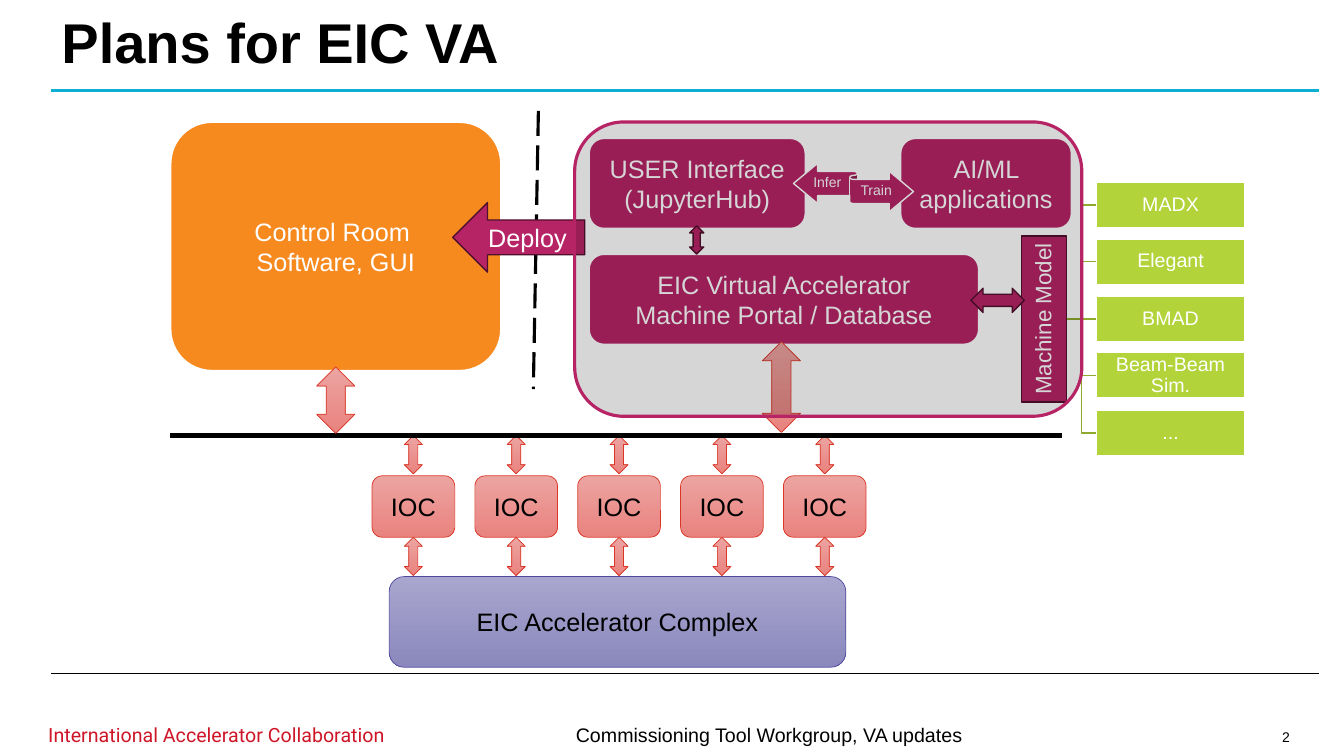
from dataclasses import dataclass

from lxml import etree
from pptx import Presentation
from pptx.dml.color import RGBColor
from pptx.enum.dml import MSO_LINE
from pptx.enum.shapes import MSO_CONNECTOR, MSO_SHAPE
from pptx.enum.text import MSO_ANCHOR, PP_ALIGN
from pptx.oxml.ns import qn
from pptx.util import Pt

PX = 9144
RECT, ROUND = MSO_SHAPE.RECTANGLE, MSO_SHAPE.ROUNDED_RECTANGLE
UP_DOWN, LEFT_RIGHT = MSO_SHAPE.UP_DOWN_ARROW, MSO_SHAPE.LEFT_RIGHT_ARROW
LEFT_ARROW, RIBBON = MSO_SHAPE.LEFT_ARROW, MSO_SHAPE.LEFT_RIGHT_RIBBON
STRAIGHT, ELBOW = MSO_CONNECTOR.STRAIGHT, MSO_CONNECTOR.ELBOW
LONG_DASH = MSO_LINE.LONG_DASH
MIDDLE, TOP = MSO_ANCHOR.MIDDLE, MSO_ANCHOR.TOP
CENTER, LEFT = PP_ALIGN.CENTER, PP_ALIGN.LEFT


@dataclass(frozen=True)
class Theme:
    black: str = "000000"
    white: str = "FFFFFF"
    cyan: str = "0DB0D4"
    crimson: str = "CE1628"
    orange: str = "F68A1F"
    magenta: str = "B62466"
    plum: str = "50102D"
    green: str = "B2D33A"
    olive: str = "8FA92E"
    red: str = "DA3525"
    violet: str = "50489D"
    rose_fade: tuple = ("ECA4A1", "E9837F")
    violet_fade: tuple = ("A8A6CE", "8B88BD")
    font: str = "Arial"
    footer_font: str = "Roboto"
    title: int = 40
    body: int = 18
    model: int = 16
    small: int = 14
    tiny: int = 10


T = Theme()


def rgb(value):
    return RGBColor.from_string(value)


def set_attrs(obj, values):
    for name, value in values.items():
        setattr(obj, name, value)


def write(sp, text, size, color, font=T.font, bold=False, align=CENTER,
          anchor=MIDDLE, spacing=1.0, inset=None):
    tf = sp.text_frame
    tf.text = text
    set_attrs(tf, {"word_wrap": True, "vertical_anchor": anchor})
    if inset:
        x, y = inset
        set_attrs(tf, {"margin_left": x * PX, "margin_right": x * PX,
                       "margin_top": y * PX, "margin_bottom": y * PX})
    for p in tf.paragraphs:
        set_attrs(p, {"alignment": align, "line_spacing": spacing})
        for r in p.runs:
            set_attrs(r.font, {"name": font, "size": Pt(size), "bold": bold})
            r.font.color.rgb = rgb(color)


def paint(fill, color):
    if isinstance(color, tuple):
        fill.gradient()
        fill.gradient_angle = 270
        for stop, shade in zip(fill.gradient_stops, color):
            stop.color.rgb = rgb(shade)
    else:
        fill.solid()
        fill.fore_color.rgb = rgb(color)


def add_block(slide, kind, box, fill, line, width):
    sp = slide.shapes.add_shape(kind, *(v * PX for v in box))
    sp.shadow.inherit = False
    paint(sp.fill, fill)
    sp.line.color.rgb = rgb(line)
    sp.line.width = Pt(width)
    return sp


def add_magenta_box(slide, box, text):
    sp = add_block(slide, ROUND, box, T.magenta, T.white, 1.5)
    write(sp, text, T.body, T.white)


def add_rose_arrow(slide, box):
    add_block(slide, UP_DOWN, box, T.rose_fade, T.red, 0.5)


def add_label(slide, box, text, size, color, **fmt):
    sp = slide.shapes.add_textbox(*(v * PX for v in box))
    write(sp, text, size, color, **fmt)


def add_line(slide, ends, color, width, kind=STRAIGHT, dash=None):
    cxn = slide.shapes.add_connector(kind, *(v * PX for v in ends))
    cxn.line.color.rgb = rgb(color)
    set_attrs(cxn.line, {"width": Pt(width), "dash_style": dash})
    etree.SubElement(cxn._element.spPr, qn("a:effectLst"))
    return cxn


def add_frame(slide):
    sp = slide.shapes.title
    set_attrs(sp, {"left": 51 * PX, "top": 0, "width": 1258 * PX, "height": 90 * PX})
    write(sp, "Plans for EIC VA", T.title, T.black, bold=True, align=LEFT, spacing=0.9)
    add_line(slide, (51, 90, 1308, 90), T.cyan, 2)
    add_line(slide, (51, 668, 1308, 668), T.black, 0.5)
    add_label(slide, (38, 715, 532, 32), "International Accelerator Collaboration",
              T.small, T.crimson, font=T.footer_font, align=LEFT, anchor=TOP, spacing=0.9)
    add_label(slide, (525, 715, 476, 32), "Commissioning Tool Workgroup, VA updates",
              T.small, T.black, anchor=TOP, spacing=0.9)
    add_label(slide, (1252, 715, 47, 32), "2", T.tiny, T.black, inset=(0, 0))


def add_accelerator(slide):
    sp = add_block(slide, ROUND, (386, 572, 453, 90), T.violet_fade, T.violet, 0.5)
    write(sp, "EIC Accelerator Complex", T.body, T.black)
    for i in range(5):
        x = 369 + 102 * i
        sp = add_block(slide, ROUND, (x, 472, 82, 61), T.rose_fade, T.red, 0.5)
        write(sp, "IOC", T.body, T.black)
        for y in (432, 533):
            add_rose_arrow(slide, (x + 32, y, 18, 38))
    add_line(slide, (169, 432, 1053, 432), T.black, 3)


def add_machine_model(slide):
    model = add_block(slide, RECT, (1013, 234, 45, 165), T.magenta, T.plum, 1)
    write(model, "Machine Model", T.model, T.white, spacing=0.9, inset=(1, 1))
    model.text_frame._txBody.bodyPr.set("vert", "vert270")
    codes = ("MADX", "Elegant", "BMAD", "Beam-Beam Sim.", "...")
    for i, code in enumerate(codes):
        y = round(181 + 56.4 * i)
        sp = add_block(slide, RECT, (1087, y, 148, 45), T.green, T.white, 1)
        write(sp, code, T.small, T.white, spacing=0.9, inset=(1, 1))
        kind = STRAIGHT if i == len(codes) // 2 else ELBOW
        cxn = add_line(slide, (1058, 316, 1087, y + 22), T.olive, 1, kind)
        cxn.begin_connect(model, 3)
        cxn.end_connect(sp, 1)
    add_block(slide, LEFT_RIGHT, (963, 286, 53, 24), T.magenta, T.plum, 1)


def add_control_room(slide):
    sp = add_block(slide, ROUND, (169, 121, 328, 247), T.orange, T.white, 1.5)
    write(sp, "Control Room \nSoftware, GUI", T.body, T.white)
    add_rose_arrow(slide, (314, 364, 38, 66))
    add_line(slide, (534, 110, 529, 386), T.black, 2.25, dash=LONG_DASH)
    sp = add_block(slide, LEFT_ARROW, (449, 201, 131, 69), T.magenta, T.plum, 1)
    write(sp, "Deploy", T.body, T.white)


def add_applications(slide):
    add_magenta_box(slide, (584, 137, 215, 90), "USER Interface\n(JupyterHub)")
    add_magenta_box(slide, (893, 137, 170, 90), "AI/ML applications")
    add_block(slide, UP_DOWN, (684, 224, 14, 28), T.magenta, T.plum, 1)
    add_block(slide, RIBBON, (787, 162, 119, 48), T.magenta, T.white, 1)
    for box, text in (((801, 170, 39, 23), "Infer"), ((846, 178, 46, 23), "Train")):
        add_label(slide, box, text, T.tiny, T.white, spacing=0.9, inset=(0, 4))


def add_shade(slide):
    sp = add_block(slide, ROUND, (570, 121, 503, 292), T.black, T.magenta, 2.25)
    clr = sp._element.spPr.find(qn("a:solidFill")).find(qn("a:srgbClr"))
    etree.SubElement(clr, qn("a:alpha"), val="16000")


def main():
    prs = Presentation()
    set_attrs(prs, {"slide_width": 1333 * PX, "slide_height": 750 * PX})
    slide = prs.slides.add_slide(prs.slide_layouts[5])
    add_frame(slide)
    add_accelerator(slide)
    add_magenta_box(slide, (584, 252, 387, 90),
                    "EIC Virtual Accelerator\nMachine Portal / Database")
    add_rose_arrow(slide, (756, 339, 38, 90))
    add_machine_model(slide)
    add_applications(slide)
    add_control_room(slide)
    add_shade(slide)
    prs.save("out.pptx")


if __name__ == "__main__":
    main()
